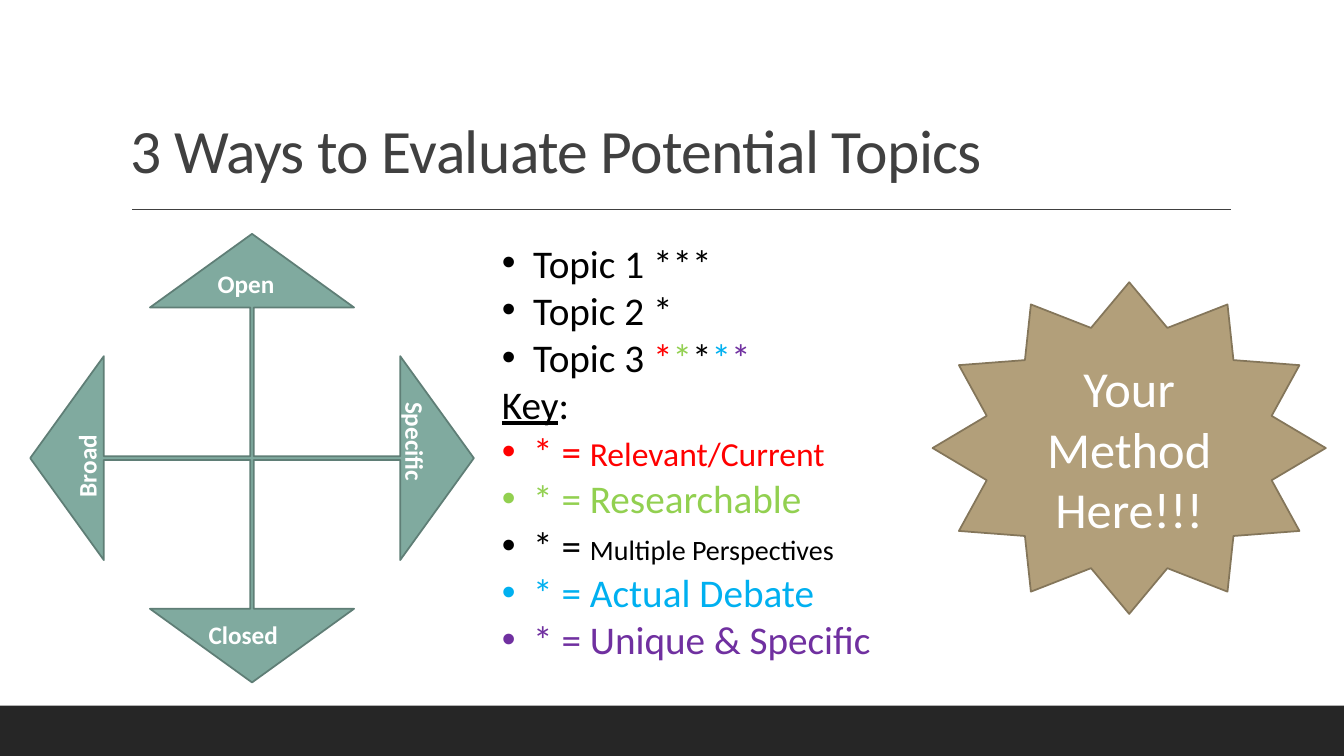
from lxml import etree
from pptx import Presentation
from pptx import util as u
from pptx.dml.color import RGBColor
from pptx.enum import shapes, text
from pptx.oxml.ns import qn

COLORS = {
    "white": "FFFFFF", "black": "000000", "band": "262626", "gray": "404040",
    "sage": "80AA9F", "pine": "5F7E76", "tan": "B29F7A", "brown": "84765A",
    "red": "FF0000", "green": "92D050", "blue": "00B0F0", "purple": "7030A0",
}
KINDS = shapes.MSO_SHAPE


def rgb(name):
    return RGBColor.from_string(COLORS[name])


class Deck:
    """Holds the font and the current slide, and draws elements on it."""

    def __init__(self, font):
        self.font = font
        self.file = Presentation()
        self.file.slide_width = u.Inches(13.33)
        self.file.slide_height = u.Inches(7.5)
        self.slide = self.file.slides.add_slide(self.file.slide_layouts[6])

    def shape(self, kind, box, fill, edge=None, adjust=()):
        item = self.slide.shapes.add_shape(kind, *map(u.Inches, box))
        item.shadow.inherit = False
        item.fill.solid()
        item.fill.fore_color.rgb = rgb(fill)
        if edge:
            item.line.color.rgb = rgb(edge)
            item.line.width = u.Pt(1.25)
        else:
            item.line.fill.background()
        for i, value in enumerate(adjust):
            item.adjustments[i] = value
        return item

    def rule(self, left, right, y, color):
        line = self.slide.shapes.add_connector(
            shapes.MSO_CONNECTOR.STRAIGHT, *map(u.Inches, (left, y, right, y)))
        line.line.color.rgb = rgb(color)
        line.line.width = u.Pt(1)
        etree.SubElement(line._element.spPr, qn("a:effectLst"))

    def box(self, box, wrap=True, grow=True, turn=0):
        item = self.slide.shapes.add_textbox(*map(u.Inches, box))
        item.rotation = turn
        frame = item.text_frame
        frame.word_wrap = wrap
        fit = text.MSO_AUTO_SIZE
        frame.auto_size = fit.SHAPE_TO_FIT_TEXT if grow else fit.NONE
        return frame

    def run(self, para, words, size, color, bold=False, under=False):
        run = para.add_run()
        run.text = words
        font = run.font
        font.name = self.font
        font.size = u.Pt(size)
        font.color.rgb = rgb(color)
        font.bold = bold
        font.underline = under
        return run

    def title(self, words, box):
        frame = self.box(box, grow=False)
        frame.vertical_anchor = text.MSO_ANCHOR.BOTTOM
        para = frame.paragraphs[0]
        para.line_spacing = 0.9
        run = self.run(para, words, 44, "gray")
        run.font._element.set("spc", "-50")

    def label(self, words, box, turn=0):
        frame = self.box(box, wrap=False, turn=turn)
        self.run(frame.paragraphs[0], words, 18, "white", bold=True)

    def bullet(self, para):
        props = para._p.get_or_add_pPr()
        indent = u.Inches(0.31)
        props.set("marL", str(indent))
        props.set("indent", str(-indent))
        etree.SubElement(props, qn("a:buFont"), typeface="Arial")
        etree.SubElement(props, qn("a:buChar"), char="•")

    def list(self, rows, box):
        """Each row is (bulleted, runs); a run is (words, size, color[, under])."""
        frame = self.box(box)
        for i, (dotted, runs) in enumerate(rows):
            para = frame.add_paragraph() if i else frame.paragraphs[0]
            if dotted:
                self.bullet(para)
            for words, size, color, *under in runs:
                self.run(para, words, size, color, under=bool(under))

    def star(self, words, box):
        frame = self.shape(KINDS.STAR_12_POINT, box, "tan", "brown").text_frame
        frame.word_wrap = True
        frame.vertical_anchor = text.MSO_ANCHOR.MIDDLE
        para = frame.paragraphs[0]
        para.alignment = text.PP_ALIGN.CENTER
        self.run(para, words, 36, "white")


ENDS = [
    ("Broad", (0.38, 4.35, 0.96, 0.4), 270),
    ("Specific", (3.5, 4.31, 1.24, 0.4), 90),
    ("Open", (2.06, 2.61, 0.88, 0.4), 0),
    ("Closed", (1.97, 6.09, 1.06, 0.4), 0),
]
KEY = [
    ("Relevant/Current", 24, "red"),
    ("Researchable", 28, "green"),
    ("Multiple Perspectives", 20, "black"),
    ("Actual Debate", 28, "blue"),
    ("Unique & Specific", 28, "purple"),
]


def main():
    deck = Deck("Calibri")
    deck.shape(KINDS.RECTANGLE, (0, 7, 13.33, 0.5), "band")
    deck.rule(1.31, 12.21, 2.08, "gray")
    deck.title("3 Ways to Evaluate Potential Topics", (1.2, 0.31, 11, 1.59))

    deck.shape(KINDS.QUAD_ARROW, (0.3, 2.32, 4.4, 4.45), "sage", "pine",
               (0.008, 0.23, 0.166))
    for words, box, turn in ENDS:
        deck.label(words, box, turn)

    stars = [("*", 28, color) for _, _, color in KEY]
    rows = [
        (True, [("Topic 1 ***", 28, "black")]),
        (True, [("Topic 2 *", 28, "black")]),
        (True, [("Topic 3 ", 28, "black"), *stars]),
        (False, [("Key", 28, "black", True), (":", 28, "black")]),
    ]
    rows += [(True, [("* = ", 28, color), (words, size, color)])
             for words, size, color in KEY]
    deck.list(rows, (4.88, 2.32, 4.52, 5.28))

    deck.star("Your Method Here!!!", (9.25, 2.8, 3.9, 3.29))
    deck.file.save("out.pptx")


if __name__ == "__main__":
    main()
